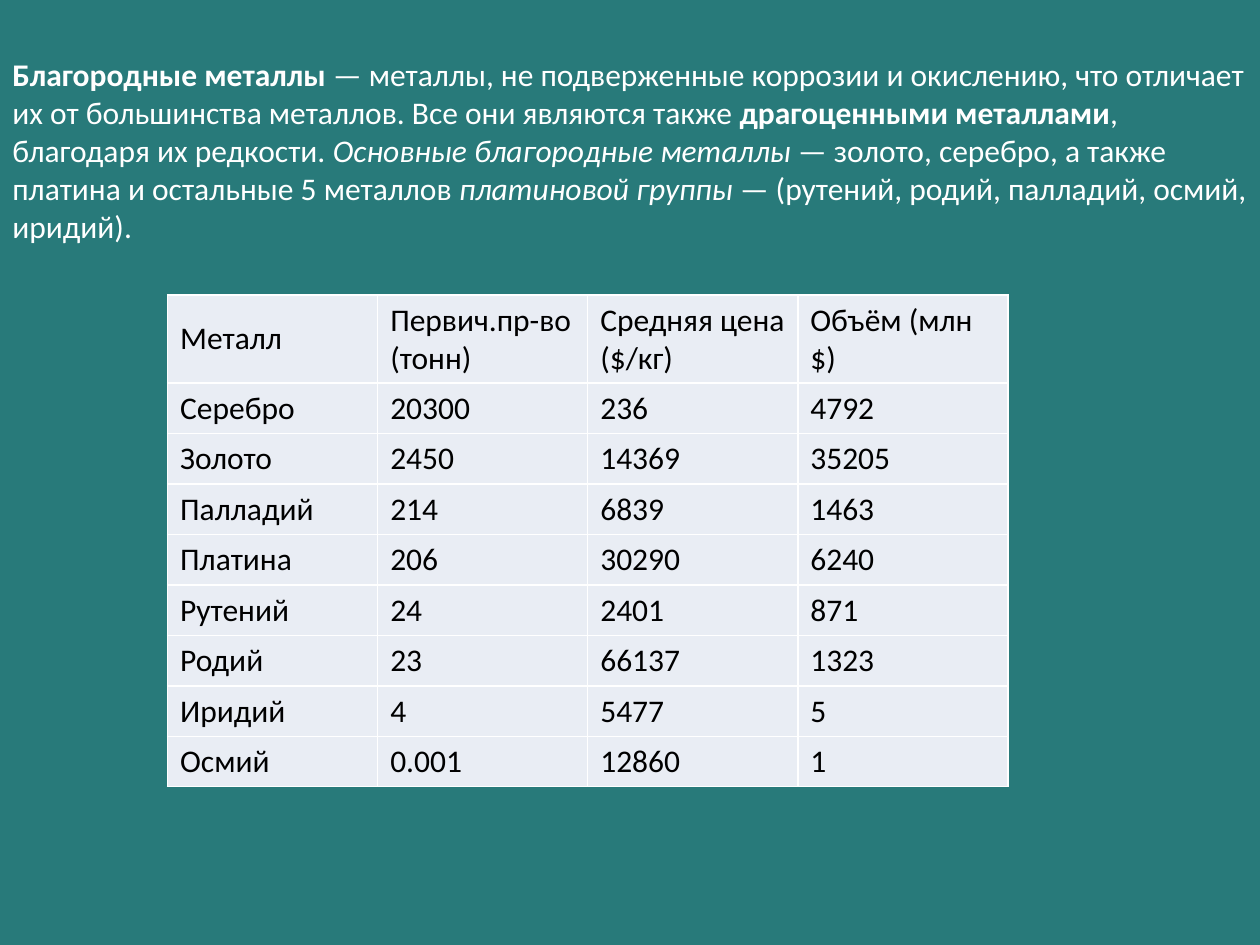
from lxml.etree import SubElement
from pptx import Presentation
from pptx.dml.color import RGBColor
from pptx.enum.text import MSO_ANCHOR, MSO_AUTO_SIZE
from pptx.oxml.ns import qn
from pptx.util import Inches, Pt

TEAL = RGBColor(0x28, 0x7A, 0x7A)
WHITE = RGBColor(0xFF, 0xFF, 0xFF)
BLACK = RGBColor(0x00, 0x00, 0x00)
PALE_BLUE = RGBColor(0xE9, 0xED, 0xF4)

DEFINITION = [
    ("Благородные металлы", {"bold": True}),
    (" — металлы, не подверженные коррозии и окислению, что отличает их "
     "от большинства металлов. Все они являются также ", {}),
    ("драгоценными металлами", {"bold": True}),
    (", благодаря их редкости. ", {}),
    ("Основные благородные металлы", {"italic": True}),
    (" — золото, серебро, а также платина и остальные 5 металлов ", {}),
    ("платиновой группы", {"italic": True}),
    (" — (рутений, родий, палладий, осмий, иридий).", {}),
]

METALS = [
    ("Металл", "Первич.пр-во (тонн)", "Средняя цена ($/кг)", "Объём (млн $)"),
    ("Серебро", "20300", "236", "4792"),
    ("Золото", "2450", "14369", "35205"),
    ("Палладий", "214", "6839", "1463"),
    ("Платина", "206", "30290", "6240"),
    ("Рутений", "24", "2401", "871"),
    ("Родий", "23", "66137", "1323"),
    ("Иридий", "4", "5477", "5"),
    ("Осмий", "0.001", "12860", "1"),
]
HEADER_HEIGHT = Inches(0.7)


def add_text(paragraph, text, color=BLACK, size=18, bold=False, italic=False):
    run = paragraph.add_run()
    run.text = text
    font = run.font
    font.name = "Calibri"
    font.size = Pt(size)
    font.bold = bold
    font.italic = italic
    font.color.rgb = color


def set_borders(cell, color, width):
    properties = cell._tc.get_or_add_tcPr()
    for index, side in enumerate(("lnL", "lnR", "lnT", "lnB")):
        line = SubElement(properties, qn(f"a:{side}"), w=str(width))
        fill = SubElement(line, qn("a:solidFill"))
        SubElement(fill, qn("a:srgbClr"), val=str(color))
        properties.remove(line)
        properties.insert(index, line)


def add_definition(slide, left, top, width, height):
    frame = slide.shapes.add_textbox(left, top, width, height).text_frame
    frame.word_wrap = True
    frame.auto_size = MSO_AUTO_SIZE.SHAPE_TO_FIT_TEXT
    for text, style in DEFINITION:
        add_text(frame.paragraphs[0], text, color=WHITE, **style)


def add_metal_table(slide, left, top, width, height):
    table = slide.shapes.add_table(
        len(METALS), len(METALS[0]), left, top, width, height).table
    table.first_row = False
    table.horz_banding = False
    body_height = (height - HEADER_HEIGHT) // (len(METALS) - 1)
    for row_index, values in enumerate(METALS):
        table.rows[row_index].height = body_height if row_index else HEADER_HEIGHT
        for column_index, value in enumerate(values):
            cell = table.cell(row_index, column_index)
            cell.fill.solid()
            cell.fill.fore_color.rgb = PALE_BLUE
            cell.vertical_anchor = MSO_ANCHOR.MIDDLE
            set_borders(cell, WHITE, Pt(1))
            add_text(cell.text_frame.paragraphs[0], value)


def main():
    presentation = Presentation()
    presentation.slide_width = Inches(10)
    presentation.slide_height = Inches(7.5)
    slide = presentation.slides.add_slide(presentation.slide_layouts[6])
    background = slide.background.fill
    background.solid()
    background.fore_color.rgb = TEAL
    add_definition(slide, Inches(0), Inches(0.39), Inches(10), Inches(1.62))
    add_metal_table(slide, Inches(1.33), Inches(2.34), Inches(6.67), Inches(3.9))
    presentation.save("out.pptx")


if __name__ == "__main__":
    main()
